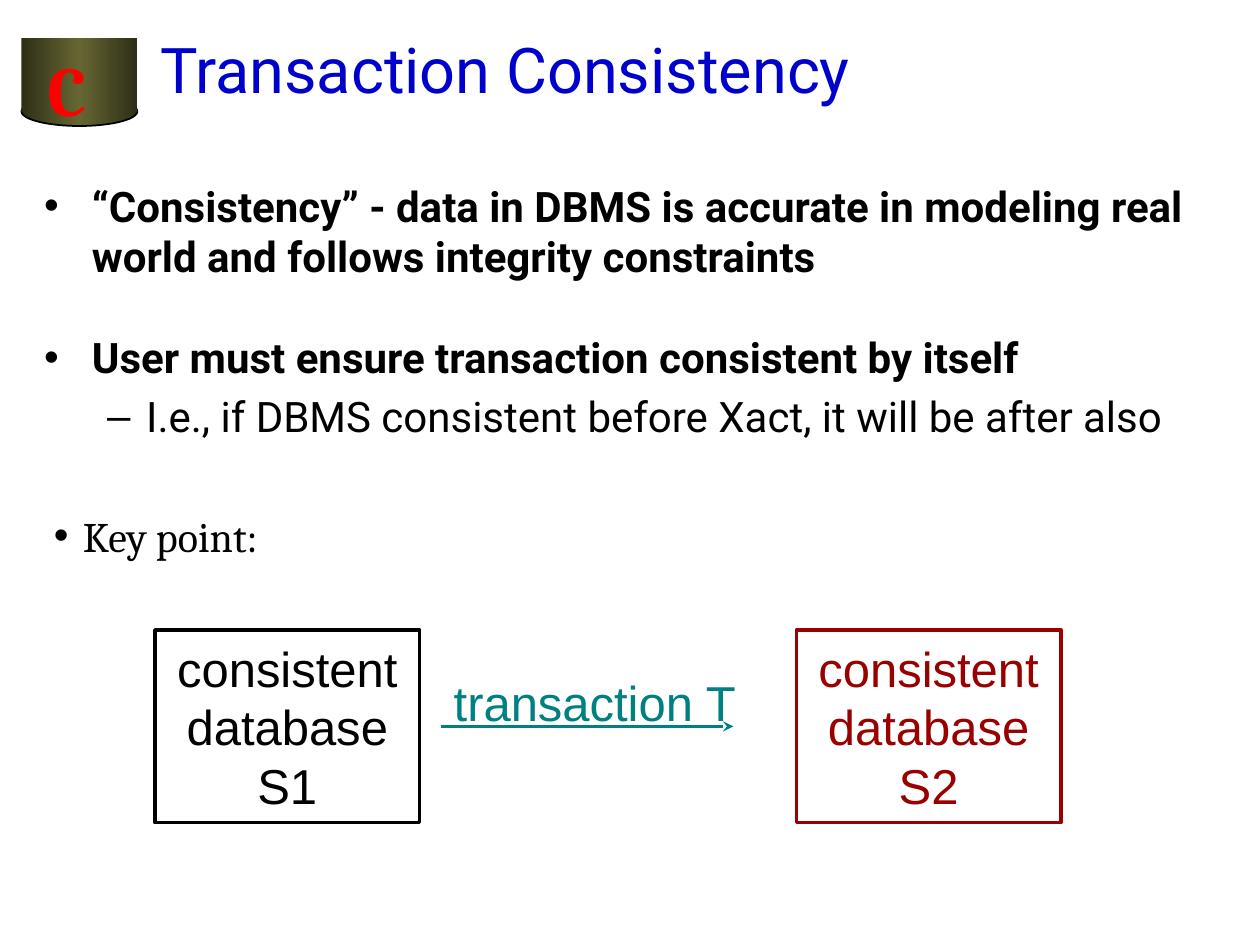
import copy

import pptx
import pptx.dml.color
import pptx.enum.shapes
import pptx.enum.text
import pptx.oxml
import pptx.oxml.ns
import pptx.util
from pptx.util import Inches

RGBColor = pptx.dml.color.RGBColor
BLACK = RGBColor(0x00, 0x00, 0x00)
BLUE = RGBColor(0x00, 0x00, 0xCC)
RED = RGBColor(0xFF, 0x00, 0x00)
MAROON = RGBColor(0x99, 0x00, 0x00)
TEAL = RGBColor(0x00, 0x80, 0x80)
OLIVE = RGBColor(0x66, 0x66, 0x33)
DARK_OLIVE = RGBColor(0x2F, 0x2F, 0x18)

SHAPES = pptx.enum.shapes.MSO_SHAPE
ALIGN = pptx.enum.text.PP_ALIGN
ANCHOR = pptx.enum.text.MSO_ANCHOR


def place(shape, left, top, width, height):
    """Move a shape to a box given in inches."""
    shape.left, shape.top = Inches(left), Inches(top)
    shape.width, shape.height = Inches(width), Inches(height)


def add_child(parent, tag, **attributes):
    """Append a drawing element with attributes and return it."""
    child = pptx.oxml.parse_xml(f"<a:{tag} {pptx.oxml.ns.nsdecls('a')}/>")
    for name, value in attributes.items():
        child.set(name, value)
    parent.append(child)
    return child


def set_bullet(paragraph, character, margin, indent):
    """Give a paragraph a bullet with a hanging indent in inches."""
    properties = paragraph._p.get_or_add_pPr()
    properties.set("marL", str(Inches(margin)))
    properties.set("indent", str(Inches(-indent)))
    add_child(properties, "buFont", typeface="Arial")
    add_child(properties, "buChar", char=character)


def set_font(paragraph, name, size, color, bold=False):
    """Set the font of a whole paragraph."""
    font = paragraph.font
    font.name, font.size, font.bold = name, pptx.util.Pt(size), bold
    font.color.rgb = color


def add_label(slide, text, box, font_name, size, color, bold=False, wrap=False):
    """Add a text box and return its paragraph."""
    frame = slide.shapes.add_textbox(*map(Inches, box)).text_frame
    frame.word_wrap = wrap
    paragraph = frame.paragraphs[0]
    paragraph.text = text
    set_font(paragraph, font_name, size, color, bold)
    return paragraph


def add_emblem(slide, left, top, width, height):
    """Draw the shaded cylinder with its letter."""
    parts = (
        (SHAPES.OVAL, top + 0.67 * height, 0.33 * height),
        (SHAPES.RECTANGLE, top, 0.84 * height),
    )
    for kind, part_top, part_height in parts:
        shape = slide.shapes.add_shape(
            kind, Inches(left), Inches(part_top), Inches(width), Inches(part_height)
        )
        shape.shadow.inherit = False
        shape.fill.gradient()
        shape.fill.gradient_angle = 0
        stop_list = shape._element.spPr.find(".//" + pptx.oxml.ns.qn("a:gsLst"))
        stop_list.insert(1, copy.deepcopy(stop_list[0]))
        colors = (DARK_OLIVE, OLIVE, DARK_OLIVE)
        for index, stop in enumerate(shape.fill.gradient_stops):
            stop.position = index / 2
            stop.color.rgb = colors[index]
        if kind == SHAPES.OVAL:
            shape.line.color.rgb = BLACK
            shape.line.width = pptx.util.Pt(1)
        else:
            shape.line.fill.background()
    add_label(slide, "C", (left + 0.11, top + 0.02, 0.6, 0.77), "Cambria", 40, RED, True)


def fill_title(slide, left, top, width, height):
    """Write the slide title."""
    title = slide.shapes.title
    place(title, left, top, width, height)
    title.text_frame.text = "Transaction Consistency"
    title.text_frame.vertical_anchor = ANCHOR.MIDDLE
    paragraph = title.text_frame.paragraphs[0]
    paragraph.alignment = ALIGN.LEFT
    set_font(paragraph, "Roboto", 36, BLUE)


def fill_body(slide, left, top, width, height):
    """Write the list of statements."""
    body = slide.placeholders[1]
    place(body, left, top, width, height)
    frame = body.text_frame
    frame.auto_size = pptx.enum.text.MSO_AUTO_SIZE.NONE
    items = (
        ("“Consistency” - data in DBMS is accurate in modeling real world "
         "and follows integrity constraints", 0, 0),
        ("User must ensure transaction consistent by itself", 0, 29),
        ("I.e., if DBMS consistent before Xact, it will be after also", 1, 5),
    )
    bullets = (("•", 0.38, 0.38), ("–", 0.81, 0.31))
    for index, (text, level, space) in enumerate(items):
        paragraph = frame.add_paragraph() if index else frame.paragraphs[0]
        paragraph.text = text
        paragraph.level = level
        paragraph.space_before = pptx.util.Pt(space)
        set_bullet(paragraph, *bullets[level])
        set_font(paragraph, "Roboto", 24, BLACK, level == 0)


def add_key_point(slide, left, top, width, height):
    """Add the bulleted heading of the diagram."""
    box = (left, top, width, height)
    paragraph = add_label(slide, "Key point:", box, "Cambria", 24, BLACK)
    set_bullet(paragraph, "•", 0.23, 0.23)


def add_state(slide, text, color, left, top, width, height):
    """Add one outlined database state."""
    shape = slide.shapes.add_shape(
        SHAPES.RECTANGLE, Inches(left), Inches(top), Inches(width), Inches(height)
    )
    shape.shadow.inherit = False
    shape.fill.background()
    shape.line.color.rgb = color
    shape.line.width = pptx.util.Pt(2)
    frame = shape.text_frame
    frame.word_wrap = True
    frame.vertical_anchor = ANCHOR.MIDDLE
    paragraph = frame.paragraphs[0]
    paragraph.text = text
    paragraph.alignment = ALIGN.CENTER
    set_font(paragraph, "Arial", 28, color)


def add_transition(slide, left, top, width, height):
    """Add the transaction arrow and the label above it."""
    arrow_top = Inches(top + height / 2)
    arrow = slide.shapes.add_connector(
        pptx.enum.shapes.MSO_CONNECTOR.STRAIGHT,
        Inches(left + 0.17), arrow_top, Inches(left + width - 0.5), arrow_top,
    )
    arrow.line.color.rgb = TEAL
    arrow.line.width = pptx.util.Pt(2)
    add_child(arrow.line._get_or_add_ln(), "tailEnd", type="stealth", w="med", len="med")
    add_child(arrow._element.spPr, "effectLst")
    label_box = (left + 0.09, top + 0.29, 2.6, 0.57)
    label = add_label(slide, "transaction T", label_box, "Arial", 28, TEAL, wrap=True)
    label.alignment = ALIGN.CENTER


def add_diagram(slide, left, top, width, height):
    """Draw the two states joined by a transaction."""
    state_width = 2.1
    right_left = left + width - state_width
    add_state(slide, "consistent database S1", BLACK, left, top, state_width, height)
    add_state(slide, "consistent database S2", MAROON, right_left, top, state_width, height)
    gap = width - 2 * state_width
    add_transition(slide, left + state_width, top, gap, height)


def main():
    """Build and save the slide."""
    presentation = pptx.Presentation()
    presentation.slide_width, presentation.slide_height = Inches(10), Inches(7.5)
    slide = presentation.slides.add_slide(presentation.slide_layouts[1])
    fill_title(slide, 1.17, -0.08, 8.5, 1.25)
    fill_body(slide, 0.25, 1.38, 9.58, 5.38)
    add_emblem(slide, 0.17, 0.3, 0.92, 0.7)
    add_key_point(slide, 0.33, 4, 1.94, 0.5)
    add_diagram(slide, 1.23, 5, 7.19, 1.53)
    presentation.save("out.pptx")


if __name__ == "__main__":
    main()
